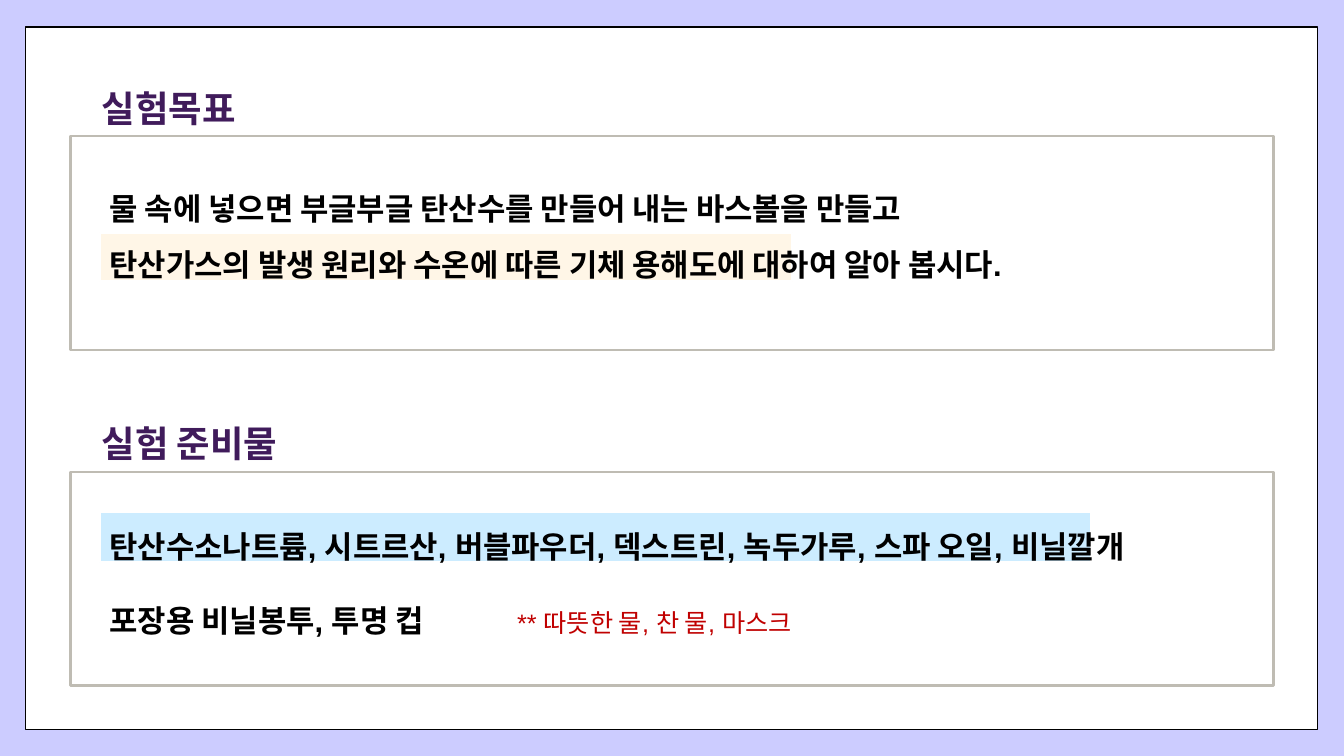
"""Builds a slide with the goal and the materials of a bath bomb experiment."""
from lxml import etree
from pptx import Presentation
from pptx.dml.color import RGBColor
from pptx.enum.shapes import MSO_SHAPE
from pptx.enum.text import MSO_ANCHOR
from pptx.oxml.ns import qn
from pptx.util import Inches, Pt

RECTANGLE = MSO_SHAPE.RECTANGLE
TOP = MSO_ANCHOR.TOP
COLORS = {
    "lavender": "CCCCFF", "white": "FFFFFF", "black": "000000",
    "purple": "401B5B", "gray": "BFBCB3", "sky": "CCECFF",
    "cream": "FFF6E7", "red": "C00000",
}

deck = Presentation()
deck.slide_width, deck.slide_height = Inches(13.33), Inches(7.5)
page = deck.slides.add_slide(deck.slide_layouts[6])
page.background.fill.solid()
page.background.fill.fore_color.rgb = RGBColor.from_string(COLORS["lavender"])


def add_panel(left, top, width, height, fill, line, weight):
    panel = page.shapes.add_shape(
        RECTANGLE, Inches(left), Inches(top), Inches(width), Inches(height))
    panel.shadow.inherit = False
    panel.fill.solid()
    panel.fill.fore_color.rgb = RGBColor.from_string(COLORS[fill])
    panel.line.color.rgb = RGBColor.from_string(COLORS[line])
    panel.line.width = Pt(weight)


def add_text(left, top, width, height, lines, font, size, color, inset):
    """Add a box of bold lines, each a pair of text and line spacing."""
    box = page.shapes.add_textbox(
        Inches(left), Inches(top), Inches(width), Inches(height))
    frame = box.text_frame
    frame.word_wrap = True
    frame.vertical_anchor = TOP
    frame.margin_top = frame.margin_bottom = Inches(inset)
    frame.text = "\n".join(text for text, spacing in lines)
    for para, (text, spacing) in zip(frame.paragraphs, lines):
        para.line_spacing = spacing
        for span in para.runs:
            span.font.name = font
            span.font.size = Pt(size)
            span.font.bold = True
            span.font.color.rgb = RGBColor.from_string(COLORS[color])
    return frame


add_panel(0.25, 0.27, 12.82, 6.97, "white", "black", 1)

sections = [
    ("실험목표", 0.75, (2.31, 6.87, 0.48, "cream"), (1.47, 1.33), [
        ("물 속에 넣으면 부글부글 탄산수를 만들어 내는 바스볼을 만들고", 2.0),
        ("탄산가스의 발생 원리와 수온에 따른 기체 용해도에 대하여 알아 봅시다.", 1.5),
    ]),
    ("실험 준비물", 4.08, (5.08, 9.83, 0.5, "sky"), (4.82, 1.58), [
        ("탄산수소나트륨, 시트르산, 버블파우더, 덱스트린, 녹두가루, 스파 오일, 비닐깔개", 2.0),
        ("포장용 비닐봉투, 투명 컵", 2.0),
    ]),
]
for title, title_top, marker, body, lines in sections:
    marker_top, marker_width, marker_height, marker_color = marker
    body_top, body_height = body
    add_text(0.91, title_top, 2.3, 0.48, [(title, 1.0)], "Calibri", 26, "purple", 0.1)
    add_panel(0.7, title_top + 0.6, 11.93, 2.12, "white", "gray", 1.75)
    add_panel(0.99, marker_top, marker_width, marker_height, marker_color, "white", 1.5)
    body_frame = add_text(
        0.99, body_top, 11.53, body_height, lines, "Arial", 22, "black", 0.05)

extras = body_frame.paragraphs[-1]
tabs = etree.SubElement(extras._p.get_or_add_pPr(), qn("a:tabLst"))
etree.SubElement(tabs, qn("a:tab"), pos=str(Inches(4.04)), algn="l")
note = extras.add_run()
note.text = "\t** 따뜻한 물, 찬 물, 마스크"
note.font.name = "Arial"
note.font.size = Pt(18)
note.font.bold = False
note.font.color.rgb = RGBColor.from_string(COLORS["red"])

deck.save("out.pptx")
